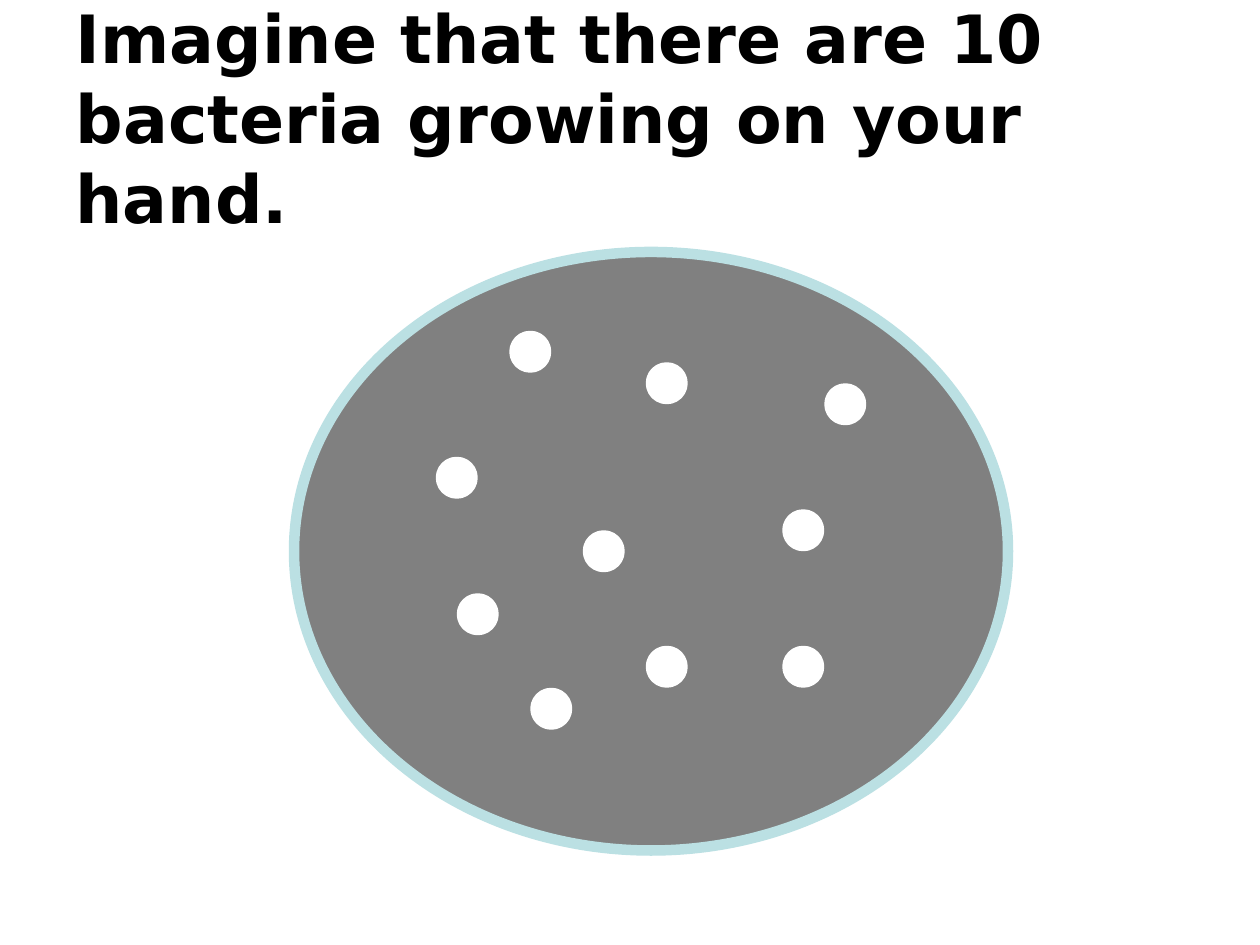
from pptx import Presentation
from pptx.dml.color import RGBColor
from pptx.enum.shapes import MSO_SHAPE
from pptx.enum.text import MSO_ANCHOR, MSO_AUTO_SIZE, PP_ALIGN
from pptx.util import Emu, Pt

SCALE = 9525  # EMU per px, 96 px to the inch


def px(n):
    return Emu(n * SCALE)


def color(code):
    return RGBColor.from_string(code)


def write(frame, text, size=38, font="DejaVu Sans", ink="000000", bold=False,
          align=PP_ALIGN.LEFT, anchor=MSO_ANCHOR.MIDDLE):
    frame.word_wrap = True
    frame.auto_size = MSO_AUTO_SIZE.NONE
    frame.vertical_anchor = anchor
    para = frame.paragraphs[0]
    para.alignment = align
    run = para.add_run()
    run.text = text
    run.font.size = Pt(size)
    run.font.name = font
    run.font.bold = bold
    run.font.color.rgb = color(ink)


class Deck:
    """Holds the style and the current slide."""
    hand = "808080"
    rim = "BBE0E3"
    germ = "FFFFFF"
    border = 6

    def __init__(self, wide, high):
        self.prs = Presentation()
        self.prs.slide_width, self.prs.slide_height = px(wide), px(high)
        self.slide = self.prs.slides.add_slide(self.prs.slide_layouts[5])

    def title(self, text, left, top, wide, high):
        box = self.slide.shapes.title
        box.left, box.top = px(left), px(top)
        box.width, box.height = px(wide), px(high)
        write(box.text_frame, text, bold=True)

    def group(self):
        return self.slide.shapes.add_group_shape()

    def oval(self, group, left, top, wide, high, fill, line):
        oval = group.shapes.add_shape(
            MSO_SHAPE.OVAL, px(left), px(top), px(wide), px(high))
        oval.shadow.inherit = False
        oval.fill.solid()
        oval.fill.fore_color.rgb = color(fill)
        oval.line.color.rgb = color(line)
        oval.line.width = Pt(self.border)


def main():
    deck = Deck(960, 720)
    deck.title("Imagine that there are 10 bacteria growing on your hand.",
               48, 29, 888, 120)

    # Hand with its bacteria
    group = deck.group()
    deck.oval(group, 224, 192, 544, 456, deck.hand, deck.rim)
    germs = [(336, 352), (496, 280), (448, 408), (352, 456), (600, 392),
             (496, 496), (600, 496), (392, 256), (632, 296), (408, 528)]
    for left, top in germs:
        deck.oval(group, left, top, 24, 24, deck.germ, deck.germ)

    deck.prs.save("out.pptx")


if __name__ == "__main__":
    main()
